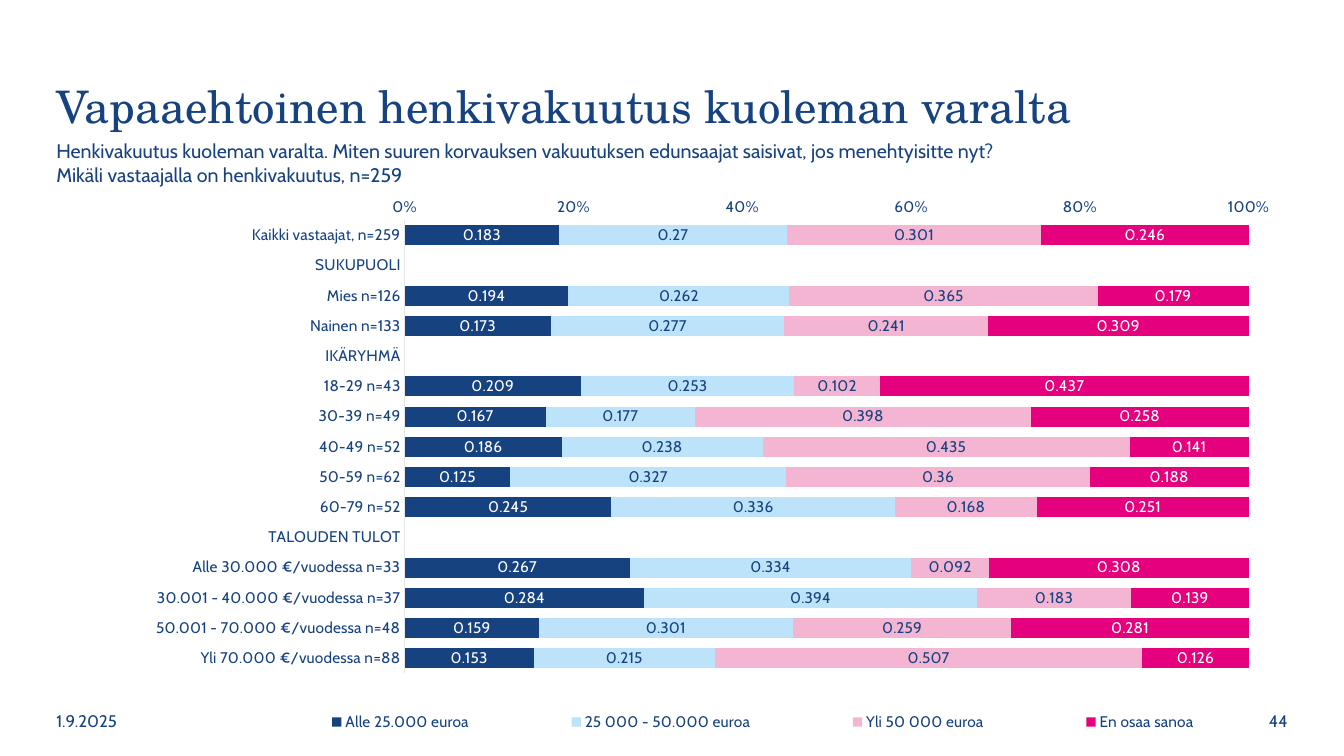
import lxml.etree
import pptx
import pptx.chart.data
import pptx.dml.color
import pptx.enum.chart
import pptx.enum.text
import pptx.oxml.ns
import pptx.util
from pptx.util import Inches

theme = {
    "navy": pptx.dml.color.RGBColor.from_string("164280"),
    "sky": pptx.dml.color.RGBColor.from_string("BCE3FA"),
    "rose": pptx.dml.color.RGBColor.from_string("F4B5D3"),
    "magenta": pptx.dml.color.RGBColor.from_string("E5007D"),
    "white": pptx.dml.color.RGBColor.from_string("FFFFFF"),
    "axis": pptx.dml.color.RGBColor.from_string("E6E6E6"),
    "heading_font": "TeX Gyre Schola",
    "body_font": "Cabin",
    "title_size": pptx.util.Pt(32),
    "subtitle_size": pptx.util.Pt(14),
    "footer_size": pptx.util.Pt(12),
    "chart_size": pptx.util.Pt(11),
}

answers = [
    ("Alle 25.000 euroa", "navy", "white"),
    ("25 000 - 50.000 euroa", "sky", "navy"),
    ("Yli 50 000 euroa", "rose", "navy"),
    ("En osaa sanoa", "magenta", "white"),
]
heading = (None,) * len(answers)
respondents = [
    ("Kaikki vastaajat, n=259", (0.183, 0.27, 0.301, 0.246)),
    ("SUKUPUOLI", heading),
    ("Mies n=126", (0.194, 0.262, 0.365, 0.179)),
    ("Nainen n=133", (0.173, 0.277, 0.241, 0.309)),
    ("IKÄRYHMÄ", heading),
    ("18-29 n=43", (0.209, 0.253, 0.102, 0.437)),
    ("30-39 n=49", (0.167, 0.177, 0.398, 0.258)),
    ("40-49 n=52", (0.186, 0.238, 0.435, 0.141)),
    ("50-59 n=62", (0.125, 0.327, 0.36, 0.188)),
    ("60-79 n=52", (0.245, 0.336, 0.168, 0.251)),
    ("TALOUDEN TULOT", heading),
    ("Alle 30.000 €/vuodessa n=33", (0.267, 0.334, 0.092, 0.308)),
    ("30.001 - 40.000 €/vuodessa n=37", (0.284, 0.394, 0.183, 0.139)),
    ("50.001 - 70.000 €/vuodessa n=48", (0.159, 0.301, 0.259, 0.281)),
    ("Yli 70.000 €/vuodessa n=88", (0.153, 0.215, 0.507, 0.126)),
]


def add_text(slide, box, lines, size, font="body_font", anchor="MIDDLE", align="LEFT", spacing=1.0):
    frame = slide.shapes.add_textbox(*[Inches(length) for length in box]).text_frame
    frame.word_wrap = True
    frame.vertical_anchor = pptx.enum.text.MSO_ANCHOR[anchor]
    for index, line in enumerate(lines):
        paragraph = frame.add_paragraph() if index else frame.paragraphs[0]
        paragraph.alignment = pptx.enum.text.PP_ALIGN[align]
        paragraph.line_spacing = spacing
        run = paragraph.add_run()
        run.text = line
        run.font.name = theme[font]
        run.font.size = theme[size]
        run.font.color.rgb = theme["navy"]


def set_layout(parent, position, target, bounds):
    qn = pptx.oxml.ns.qn
    for old in parent.findall(qn("c:layout")):
        parent.remove(old)
    layout = lxml.etree.Element(qn("c:layout"))
    manual = lxml.etree.SubElement(layout, qn("c:manualLayout"))
    settings = [("layoutTarget", target)] if target else []
    settings += [("xMode", "edge"), ("yMode", "edge")]
    settings += zip("xywh", bounds)
    for tag, value in settings:
        lxml.etree.SubElement(manual, qn("c:" + tag)).set("val", str(value))
    parent.insert(position, layout)


presentation = pptx.Presentation()
presentation.slide_width = Inches(13.33)
presentation.slide_height = Inches(7.5)
slide = presentation.slides.add_slide(presentation.slide_layouts[6])

survey = pptx.chart.data.CategoryChartData()
survey.categories = [group for group, shares in respondents]
for (answer, fill, label), shares in zip(answers, zip(*[row[1] for row in respondents])):
    survey.add_series(answer, shares)

chart = slide.shapes.add_chart(
    pptx.enum.chart.XL_CHART_TYPE.BAR_STACKED_100,
    Inches(0.11), Inches(1.9), Inches(12.76), Inches(5.6), survey,
).chart
chart.has_title = False
chart.font.name = theme["body_font"]
chart.font.size = theme["chart_size"]
chart.font.color.rgb = theme["navy"]

bars = chart.plots[0]
bars.gap_width = 50
bars.overlap = 100
bars.vary_by_categories = False
for series, (answer, fill, label) in zip(bars.series, answers):
    series.format.fill.solid()
    series.format.fill.fore_color.rgb = theme[fill]
    series.data_labels.show_value = True
    series.data_labels.font.name = theme["body_font"]
    series.data_labels.font.size = theme["chart_size"]
    series.data_labels.font.color.rgb = theme[label]

groups = chart.category_axis
groups.reverse_order = True
groups.crosses = pptx.enum.chart.XL_AXIS_CROSSES.MAXIMUM
groups.format.line.color.rgb = theme["axis"]
groups.format.line.width = pptx.util.Pt(0.75)

percent = chart.value_axis
percent.minimum_scale = 0
percent.maximum_scale = 1
percent.major_unit = 0.2
percent.has_major_gridlines = False
percent.tick_labels.number_format = "0%"
percent.tick_labels.number_format_is_linked = False
percent.format.line.fill.background()
for axis in (groups, percent):
    axis.major_tick_mark = pptx.enum.chart.XL_TICK_MARK.NONE
    axis.minor_tick_mark = pptx.enum.chart.XL_TICK_MARK.NONE

chart.has_legend = True
chart.legend.position = pptx.enum.chart.XL_LEGEND_POSITION.BOTTOM
chart.legend.include_in_layout = False
plot_area = chart.element.find(".//" + pptx.oxml.ns.qn("c:plotArea"))
legend = chart.element.find(".//" + pptx.oxml.ns.qn("c:legend"))
set_layout(plot_area, 0, "inner", (0.306, 0.051, 0.656, 0.803))
set_layout(legend, 1, None, (0.174, 0.91, 0.821, 0.06))

add_text(slide, (0.46, 0.6, 11.56, 0.96), ["Vapaaehtoinen henkivakuutus kuoleman varalta"],
         "title_size", font="heading_font", spacing=0.9)
add_text(slide, (0.46, 1.33, 12.41, 0.57), [
    "Henkivakuutus kuoleman varalta. Miten suuren korvauksen vakuutuksen edunsaajat saisivat, jos menehtyisitte nyt?",
    "Mikäli vastaajalla on henkivakuutus, n=259",
], "subtitle_size", anchor="TOP")
add_text(slide, (0.46, 6.95, 1.18, 0.4), ["1.9.2025"], "footer_size")
add_text(slide, (11.69, 6.95, 1.18, 0.4), ["44"], "footer_size", align="RIGHT")

presentation.save("out.pptx")
